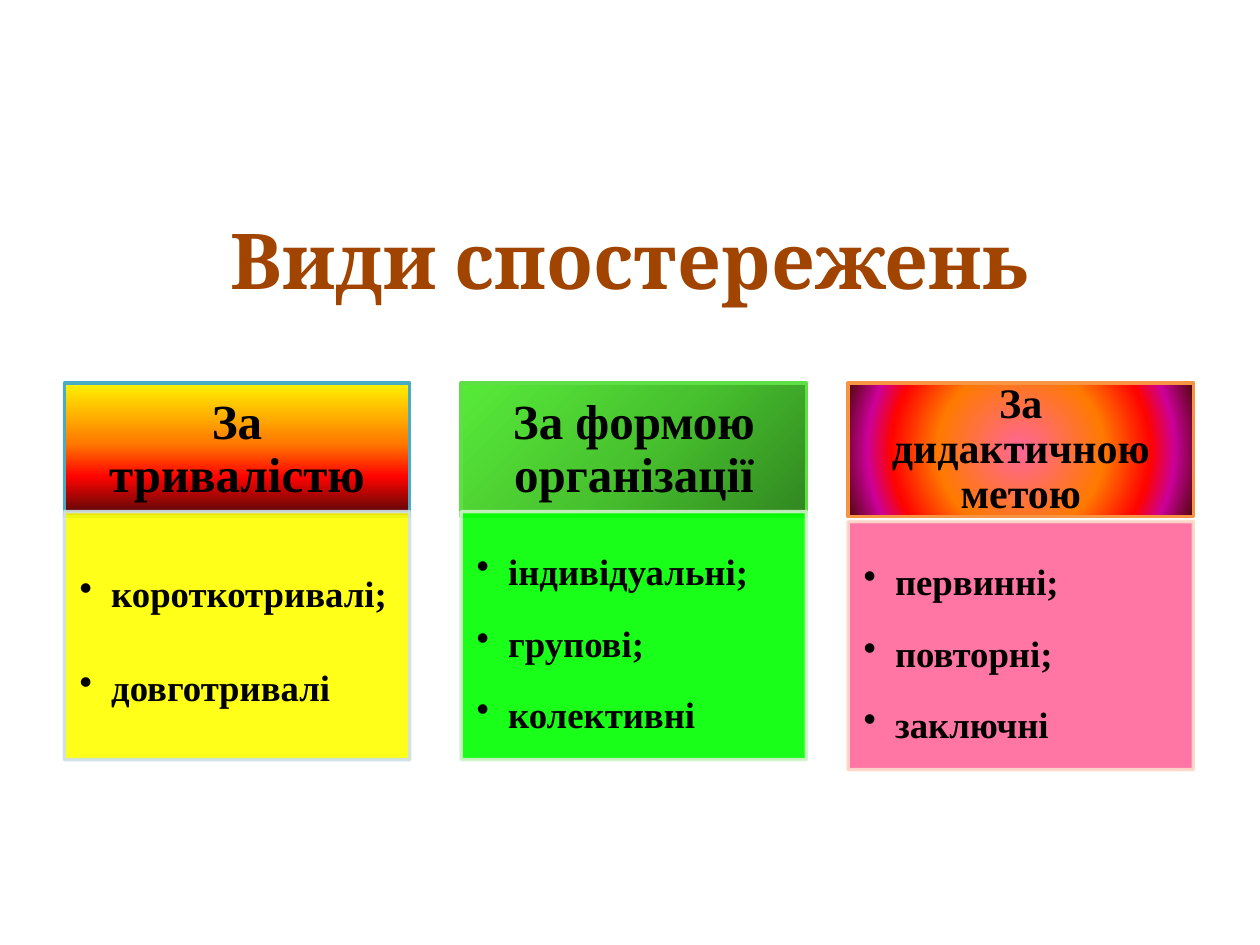
from lxml import etree
from pptx import Presentation
from pptx.dml.color import RGBColor
from pptx.enum.shapes import MSO_SHAPE
from pptx.enum.text import MSO_ANCHOR, PP_ALIGN
from pptx.oxml import parse_xml
from pptx.oxml.ns import qn
from pptx.util import Pt

RECTANGLE = MSO_SHAPE.RECTANGLE
TOP, MIDDLE = MSO_ANCHOR.TOP, MSO_ANCHOR.MIDDLE
LEFT, CENTER = PP_ALIGN.LEFT, PP_ALIGN.CENTER
NAMESPACE = "http://schemas.openxmlformats.org/drawingml/2006/main"
TITLE_ONLY = 5

TITLE = "Види спостережень"
COLUMNS = [
    {
        "heading": "За тривалістю", "heading_size": 28, "heading_insets": (15.7, 9),
        "items": ["короткотривалі;", "довготривалі"], "spacing": 2,
        "left": 36.8, "list_top": 292.4,
        "stops": [(0, "FFF200"), (45, "FF7A00"), (70, "FF0300"), (100, "4D0808")],
        "focus": None, "heading_line": "49ACC5",
        "list_fill": "FFFF00", "list_line": "CDE1E8",
    },
    {
        "heading": "За формою організації", "heading_size": 28, "heading_insets": (15.7, 9),
        "items": ["індивідуальні;", "групові;", "колективні"], "spacing": 1.5,
        "left": 263.6, "list_top": 292.4,
        "stops": [(0, "318720"), (50, "48C32F"), (100, "57EA39")],
        "focus": (100, 100, 0, 0), "heading_line": "5FDF45",
        "list_fill": "00FF00", "list_line": "D2F2CB",
    },
    {
        "heading": "За дидактичною метою", "heading_size": 24, "heading_insets": (13.5, 7.7),
        "items": ["первинні;", "повторні;", "заключні"], "spacing": 1.5,
        "left": 484.7, "list_top": 298.1,
        "stops": [(0, "FF6699"), (45, "FF7A00"), (70, "FF0300"),
                  (83, "CC0099"), (100, "4D0808")],
        "focus": (50, 50, 50, 50), "heading_line": "F69444",
        "list_fill": "FF6699", "list_line": "FBDACB",
    },
]
THEME = {
    "title_font": "Cambria", "title_size": 44, "title_color": "A04400",
    "font": "Times New Roman", "text_color": "000000", "list_size": 21,
    "line_width": 2, "list_opacity": 90,
}
WIDTH, HEADING_TOP, HEADING_HEIGHT, LIST_HEIGHT = 197.3, 218.9, 76.3, 141.8
INDENT = 18


def style_font(font, name, size, color):
    font.name, font.size, font.bold = name, Pt(size), True
    font.color.rgb = RGBColor.from_string(color)


def set_opacity(fill_parent, percent):
    color = fill_parent.find(qn("a:solidFill")).find(qn("a:srgbClr"))
    etree.SubElement(color, qn("a:alpha")).set("val", str(percent * 1000))


def set_gradient(box, stops, focus):
    """Fill with a gradient: downward, or circular around focus (l, t, r, b in %)."""
    stop_xml = "".join(
        f'<a:gs pos="{position * 1000}"><a:srgbClr val="{color}"/></a:gs>'
        for position, color in stops)
    if focus:
        sides = " ".join(f'{side}="{value * 1000}"' for side, value in zip("ltrb", focus))
        shade = f'<a:path path="circle"><a:fillToRect {sides}/></a:path>'
    else:
        shade = '<a:lin ang="5400000" scaled="0"/>'
    gradient = parse_xml(f'<a:gradFill xmlns:a="{NAMESPACE}" rotWithShape="1">'
                         f'<a:gsLst>{stop_xml}</a:gsLst>{shade}</a:gradFill>')
    box.fill.background()
    properties = box.element.spPr
    properties.replace(properties.find(qn("a:noFill")), gradient)


def add_box(slide, left, top, height, line_color, insets, anchor):
    box = slide.shapes.add_shape(RECTANGLE, Pt(left), Pt(top), Pt(WIDTH), Pt(height))
    box.shadow.inherit = False
    box.line.color.rgb = RGBColor.from_string(line_color)
    box.line.width = Pt(THEME["line_width"])
    frame = box.text_frame
    frame.word_wrap, frame.vertical_anchor = True, anchor
    (frame.margin_left, frame.margin_top,
     frame.margin_right, frame.margin_bottom) = map(Pt, insets)
    return box


def add_bullet(para):
    properties = para._p.get_or_add_pPr()
    properties.set("marL", str(Pt(INDENT)))
    properties.set("indent", str(-Pt(INDENT)))
    color = etree.SubElement(properties, qn("a:buClr"))
    etree.SubElement(color, qn("a:srgbClr")).set("val", THEME["text_color"])
    etree.SubElement(properties, qn("a:buChar")).set("char", "•")


def add_heading(slide, column):
    box = add_box(slide, column["left"], HEADING_TOP, HEADING_HEIGHT,
                  column["heading_line"], column["heading_insets"] * 2, MIDDLE)
    set_gradient(box, column["stops"], column["focus"])
    para = box.text_frame.paragraphs[0]
    para.text, para.alignment, para.line_spacing = column["heading"], CENTER, 0.9
    style_font(para.font, THEME["font"], column["heading_size"], THEME["text_color"])


def add_list(slide, column):
    box = add_box(slide, column["left"], column["list_top"], LIST_HEIGHT,
                  column["list_line"], (8.8, 8.8, 11.8, 13.2), TOP)
    box.fill.solid()
    box.fill.fore_color.rgb = RGBColor.from_string(column["list_fill"])
    properties = box.element.spPr
    for fill_parent in (properties, properties.find(qn("a:ln"))):
        set_opacity(fill_parent, THEME["list_opacity"])
    frame = box.text_frame
    for index, item in enumerate(column["items"]):
        para = frame.add_paragraph() if index else frame.paragraphs[0]
        add_bullet(para)
        para.text, para.level, para.alignment = item, 1, LEFT
        para.line_spacing = column["spacing"]
        para.space_before = Pt(3.1 if index else 0)
        style_font(para.font, THEME["font"], THEME["list_size"], THEME["text_color"])


def main():
    deck = Presentation()
    deck.slide_width, deck.slide_height = Pt(720), Pt(540)
    slide = deck.slides.add_slide(deck.slide_layouts[TITLE_ONLY])

    title = slide.shapes.title
    title.left, title.top, title.width, title.height = Pt(36), Pt(82.8), Pt(648), Pt(130.3)
    title.text_frame.vertical_anchor = MIDDLE
    para = title.text_frame.paragraphs[0]
    para.text, para.alignment = TITLE, CENTER
    style_font(para.font, THEME["title_font"], THEME["title_size"], THEME["title_color"])

    for column in COLUMNS:
        add_heading(slide, column)
        add_list(slide, column)
    deck.save("out.pptx")


if __name__ == "__main__":
    main()
